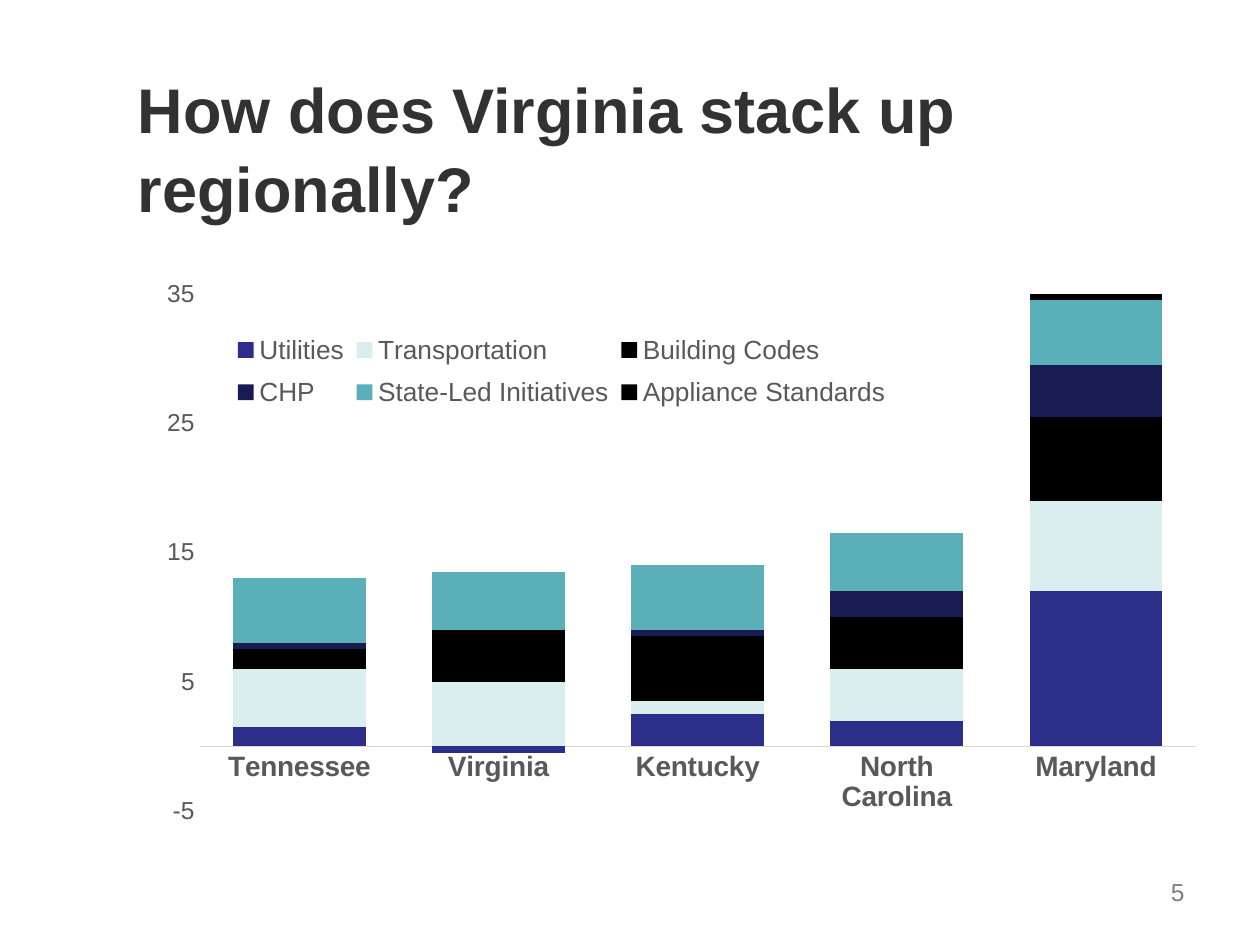
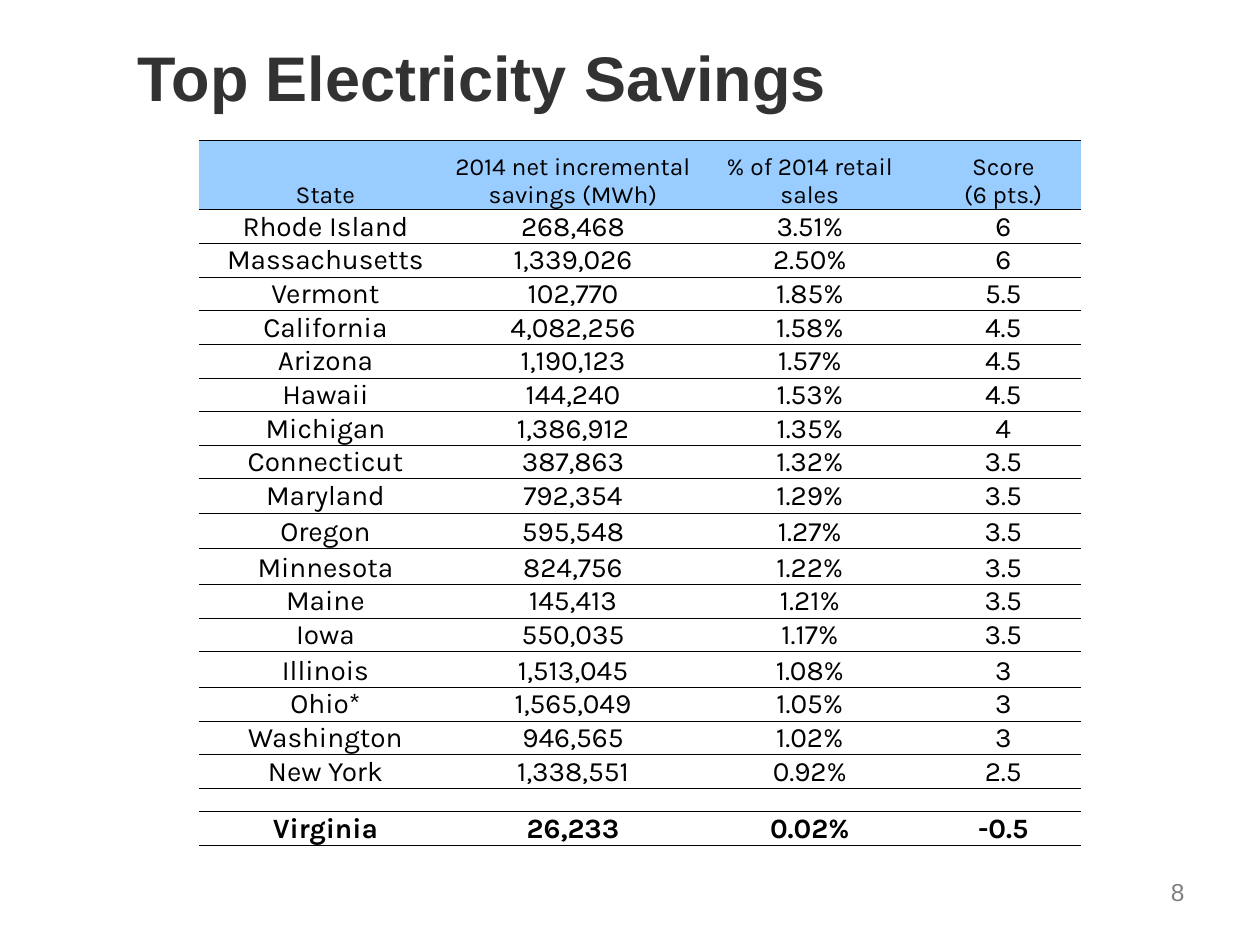
from lxml.etree import SubElement
from pptx import Presentation
from pptx.chart.data import CategoryChartData
from pptx.dml.color import RGBColor
from pptx.enum.chart import XL_CHART_TYPE, XL_LEGEND_POSITION, XL_TICK_MARK
from pptx.enum.text import MSO_ANCHOR, PP_ALIGN
from pptx.oxml import parse_xml
from pptx.oxml.ns import nsdecls, qn
from pptx.util import Cm, Pt

# Shared formats
TITLE = {"name": "Arial", "size": Pt(36), "bold": True, "color": "323232"}
PAGE_NUMBER = {"name": "Arial", "size": Pt(14), "color": "808080"}
AXIS = {"name": "Arial", "size": Pt(14), "bold": False, "color": "595959"}
CATEGORY = AXIS | {"size": Pt(16), "bold": True}
LEGEND = AXIS | {"size": Pt(15)}
HEADER = {"name": "Karla", "size": Pt(14), "bold": False, "color": "000000"}
BODY = HEADER | {"size": Pt(16)}
HIGHLIGHT = BODY | {"bold": True}
HEADER_FILL = "99CCFF"
RULE = "000000"
AXIS_LINE = "D9D9D9"

STATES = ["Tennessee", "Virginia", "Kentucky", "North Carolina", "Maryland"]
SCORES = [
    ("Utilities", "2D2D8A", [1.5, -0.5, 2.5, 2, 12]),
    ("Transportation", "DAEDEF", [4.5, 5, 1, 4, 7]),
    ("Building Codes", "000000", [1.5, 4, 5, 4, 6.5]),
    ("CHP", "1B1B53", [0.5, 0, 0.5, 2, 4]),
    ("State-Led Initiatives", "5AAFB8", [5, 4.5, 5, 4.5, 5]),
    ("Appliance Standards", "000000", [0, 0, 0, 0, 0.5]),
]

SAVINGS = [
    ("State", "2014 net incremental savings (MWh)", "% of 2014 retail sales", "Score\n(6 pts.)"),
    ("Rhode Island", "268,468", "3.51%", "6"),
    ("Massachusetts", "1,339,026", "2.50%", "6"),
    ("Vermont", "102,770", "1.85%", "5.5"),
    ("California", "4,082,256", "1.58%", "4.5"),
    ("Arizona", "1,190,123", "1.57%", "4.5"),
    ("Hawaii", "144,240", "1.53%", "4.5"),
    ("Michigan", "1,386,912", "1.35%", "4"),
    ("Connecticut", "387,863", "1.32%", "3.5"),
    ("Maryland", "792,354", "1.29%", "3.5"),
    ("Oregon", "595,548", "1.27%", "3.5"),
    ("Minnesota", "824,756", "1.22%", "3.5"),
    ("Maine", "145,413", "1.21%", "3.5"),
    ("Iowa", "550,035", "1.17%", "3.5"),
    ("Illinois", "1,513,045", "1.08%", "3"),
    ("Ohio*", "1,565,049", "1.05%", "3"),
    ("Washington", "946,565", "1.02%", "3"),
    ("New York", "1,338,551", "0.92%", "2.5"),
]
VIRGINIA = [("Virginia", "26,233", "0.02%", "-0.5")]
COLUMN_SHARES = [2, 1.93, 1.83, 1.24]
ROW_HEIGHT = 0.67
TALL_ROWS = {0: 1.4, 9: 0.69, 10: 0.72, 11: 0.72, 14: 0.72}


def color(value):
    return RGBColor.from_string(value)


def set_font(font, values):
    for name, value in values.items():
        if name == "color":
            font.color.rgb = color(value)
        else:
            setattr(font, name, value)


def add_text(slide, box, text, values, **frame_values):
    frame = slide.shapes.add_textbox(*map(Cm, box)).text_frame
    frame.word_wrap = True
    for name, value in frame_values.items():
        setattr(frame, name, value)
    paragraph = frame.paragraphs[0]
    paragraph.text = text
    set_font(paragraph.runs[0].font, values)
    return paragraph


def add_frame(presentation, title, title_top, number):
    """Add a slide with its title and page number."""
    slide = presentation.slides.add_slide(presentation.slide_layouts[6])
    heading = add_text(slide, (2.53, title_top, 22.02, 3.18), title, TITLE, margin_top=Cm(0.2))
    heading.line_spacing = 1.04
    page = add_text(slide, (21.39, 17.35, 2.74, 1.27), number, PAGE_NUMBER,
                    vertical_anchor=MSO_ANCHOR.MIDDLE)
    page.alignment = PP_ALIGN.RIGHT
    return slide


def manual_layout(x, y, width, height, inner=False):
    target = '<c:layoutTarget val="inner"/>' if inner else ""
    sizes = "".join(f'<c:{tag} val="{value}"/>'
                    for tag, value in zip("xywh", (x, y, width, height)))
    return parse_xml(f'<c:layout {nsdecls("c")}><c:manualLayout>{target}'
                     f'<c:xMode val="edge"/><c:yMode val="edge"/>{sizes}'
                     '</c:manualLayout></c:layout>')


def add_score_chart(slide, box):
    data = CategoryChartData()
    data.categories = STATES
    for name, _, values in SCORES:
        data.add_series(name, values)
    chart = slide.shapes.add_chart(XL_CHART_TYPE.COLUMN_STACKED, *map(Cm, box), data).chart
    chart.has_title = False
    set_font(chart.font, AXIS)

    # Columns
    plot = chart.plots[0]
    plot.gap_width, plot.overlap, plot.vary_by_categories = 50, 100, False
    for series, (_, fill, _) in zip(plot.series, SCORES):
        series.invert_if_negative = False
        series.format.fill.solid()
        series.format.fill.fore_color.rgb = color(fill)

    # Axes
    for axis, values in ((chart.category_axis, CATEGORY), (chart.value_axis, AXIS)):
        axis.major_tick_mark = axis.minor_tick_mark = XL_TICK_MARK.NONE
        axis.has_major_gridlines = False
        set_font(axis.tick_labels.font, values)
    chart.category_axis.format.line.color.rgb = color(AXIS_LINE)
    chart.category_axis.format.line.width = Pt(0.75)
    scale = chart.value_axis
    scale.minimum_scale, scale.maximum_scale, scale.major_unit = -5, 35, 10
    scale.format.line.fill.background()

    # Legend over the shorter columns
    chart.has_legend = True
    legend = chart.legend
    legend.position = XL_LEGEND_POSITION.TOP
    legend.include_in_layout = True
    set_font(legend.font, LEGEND)

    # Places inside the chart
    area = plot._element.getparent()
    for layout in area.findall(qn("c:layout")):
        area.remove(layout)
    area.insert(0, manual_layout(0.067, 0.051, 0.903, 0.897, inner=True))
    for layout in legend._element.findall(qn("c:layout")):
        legend._element.remove(layout)
    legend._element.find(qn("c:legendPos")).addnext(manual_layout(0.09, 0.1, 0.61, 0.17))


def set_borders(cell):
    """Rule the cell above and below only."""
    properties = cell._tc.get_or_add_tcPr()
    for index, side in enumerate("LRTB"):
        line = SubElement(properties, qn(f"a:ln{side}"), w=str(Pt(0.5)))
        if side in "TB":
            fill = SubElement(line, qn("a:solidFill"))
            SubElement(fill, qn("a:srgbClr"), val=RULE)
        else:
            SubElement(line, qn("a:noFill"))
        properties.insert(index, line)


def add_savings_table(slide, box, rows, heights, formats, has_header=False):
    left, top, width = box
    shape = slide.shapes.add_table(len(rows), len(COLUMN_SHARES), Cm(left), Cm(top),
                                   Cm(width), Cm(sum(heights)))
    table = shape.table
    table.first_row = table.horz_banding = False
    for column, share in zip(table.columns, COLUMN_SHARES):
        column.width = Cm(width * share / sum(COLUMN_SHARES))
    for index, (row, height, texts) in enumerate(zip(table.rows, heights, rows)):
        row.height = Cm(height)
        is_header = has_header and index == 0
        for cell, text in zip(row.cells, texts):
            cell.text = text
            cell.vertical_anchor = MSO_ANCHOR.BOTTOM
            for side in ("left", "right", "top", "bottom"):
                setattr(cell, f"margin_{side}", 0)
            for paragraph in cell.text_frame.paragraphs:
                paragraph.alignment = PP_ALIGN.CENTER
                set_font(paragraph.runs[0].font, HEADER if is_header else formats)
            if is_header:
                cell.fill.solid()
                cell.fill.fore_color.rgb = color(HEADER_FILL)
            else:
                cell.fill.background()
            set_borders(cell)


def add_region_slide(presentation):
    slide = add_frame(presentation, "How does Virginia stack up regionally?", 1.17, "5")
    add_score_chart(slide, (2.54, 5.33, 22.23, 11.63))


def add_savings_slide(presentation):
    slide = add_frame(presentation, "Top Electricity Savings", 0.51, "8")
    heights = [TALL_ROWS.get(index, ROW_HEIGHT) for index in range(len(SAVINGS))]
    add_savings_table(slide, (4.02, 2.83, 17.78), SAVINGS, heights, BODY, has_header=True)
    add_savings_table(slide, (4.02, 16.36, 17.78), VIRGINIA, [ROW_HEIGHT], HIGHLIGHT)


def main():
    presentation = Presentation()
    presentation.slide_width, presentation.slide_height = Cm(25.4), Cm(19.05)
    add_region_slide(presentation)
    add_savings_slide(presentation)
    presentation.save("out.pptx")


if __name__ == "__main__":
    main()
